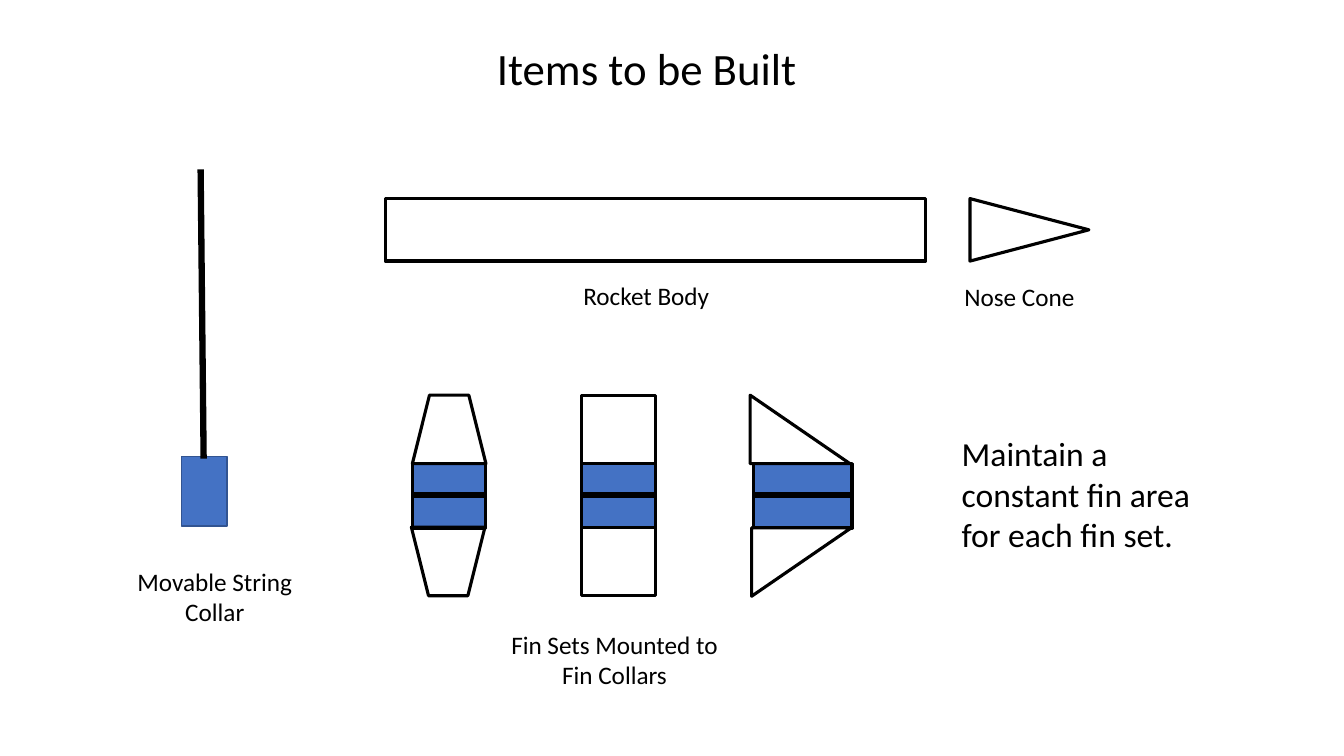
"""Build the slide that shows the rocket parts to be built."""
from lxml.etree import SubElement
from pptx import Presentation
from pptx.dml.color import RGBColor
from pptx.enum.shapes import MSO_CONNECTOR, MSO_SHAPE as Shape
from pptx.enum.text import MSO_AUTO_SIZE, PP_ALIGN as Align
from pptx.oxml.ns import qn
from pptx.util import Pt

PX = 9144
BLACK = RGBColor(0x00, 0x00, 0x00)
WHITE = RGBColor(0xFF, 0xFF, 0xFF)
BLUE = RGBColor(0x44, 0x72, 0xC4)
NAVY = RGBColor(0x32, 0x54, 0x91)

deck = Presentation()
deck.slide_width, deck.slide_height = 1333 * PX, 750 * PX
page = deck.slides.add_slide(deck.slide_layouts[6])


def add_part(kind, left, top, width, height, fill=None, turn=0, edge=BLACK, weight=2.25):
    part = page.shapes.add_shape(kind, left * PX, top * PX, width * PX, height * PX)
    part.shadow.inherit = False
    part.rotation = turn
    if fill is None:
        part.fill.background()
    else:
        part.fill.solid()
        part.fill.fore_color.rgb = fill
    part.line.color.rgb = edge
    part.line.width = Pt(weight)


def add_string(x1, y1, x2, y2):
    string = page.shapes.add_connector(MSO_CONNECTOR.STRAIGHT, x1 * PX, y1 * PX, x2 * PX, y2 * PX)
    string.line.color.rgb = BLACK
    string.line.width = Pt(4.5)
    SubElement(string._element.spPr, qn("a:effectLst"))


add_part(Shape.RECTANGLE, 382, 197, 536, 62)
add_part(Shape.ISOSCELES_TRIANGLE, 990, 169, 62, 118, turn=90)

COLLAR_TOP, COLLAR_HEIGHT, STRING_Y = 460, 64, 491
FIN_TOP, LOWER_FIN_TOP, FIN_HEIGHT = 392, 523, 68
for left, width in [(409, 73), (577, 73), (747, 98)]:
    add_part(Shape.RECTANGLE, left, COLLAR_TOP, width, COLLAR_HEIGHT, BLUE)
    add_string(left, STRING_Y, left + width, STRING_Y)

add_part(Shape.TRAPEZOID, 409, FIN_TOP, 73, FIN_HEIGHT)
add_part(Shape.TRAPEZOID, 408, LOWER_FIN_TOP, 73, FIN_HEIGHT, turn=180)
for top in (FIN_TOP, LOWER_FIN_TOP):
    add_part(Shape.RECTANGLE, 577, top, 73, FIN_HEIGHT, WHITE)
add_part(Shape.RIGHT_TRIANGLE, 744, FIN_TOP, 99, FIN_HEIGHT, WHITE)
add_part(Shape.RIGHT_TRIANGLE, 761, 508, FIN_HEIGHT, 99, WHITE, turn=90)

add_part(Shape.RECTANGLE, 180, 453, 45, 69, BLUE, edge=NAVY, weight=1)
add_string(202, 455, 199, 168)

captions = [
    ("Items to be Built", 180, 36, 923, 64, 32, Align.CENTER),
    ("Rocket Body", 542, 273, 198, 40, 18, Align.CENTER),
    ("Nose Cone", 912, 274, 198, 40, 18, Align.CENTER),
    ("Movable String Collar", 114, 557, 198, 71, 18, Align.CENTER),
    ("Fin Sets Mounted to Fin Collars", 480, 619, 259, 71, 18, Align.CENTER),
    ("Maintain a constant fin area for each fin set.", 944, 425, 266, 131, 24, Align.LEFT),
]
for text, left, top, width, height, size, align in captions:
    box = page.shapes.add_textbox(left * PX, top * PX, width * PX, height * PX)
    frame = box.text_frame
    frame.word_wrap = True
    frame.auto_size = MSO_AUTO_SIZE.SHAPE_TO_FIT_TEXT
    para = frame.paragraphs[0]
    para.text = text
    para.alignment = align
    para.font.name = "Calibri"
    para.font.size = Pt(size)
    para.font.color.rgb = BLACK

deck.save("out.pptx")
